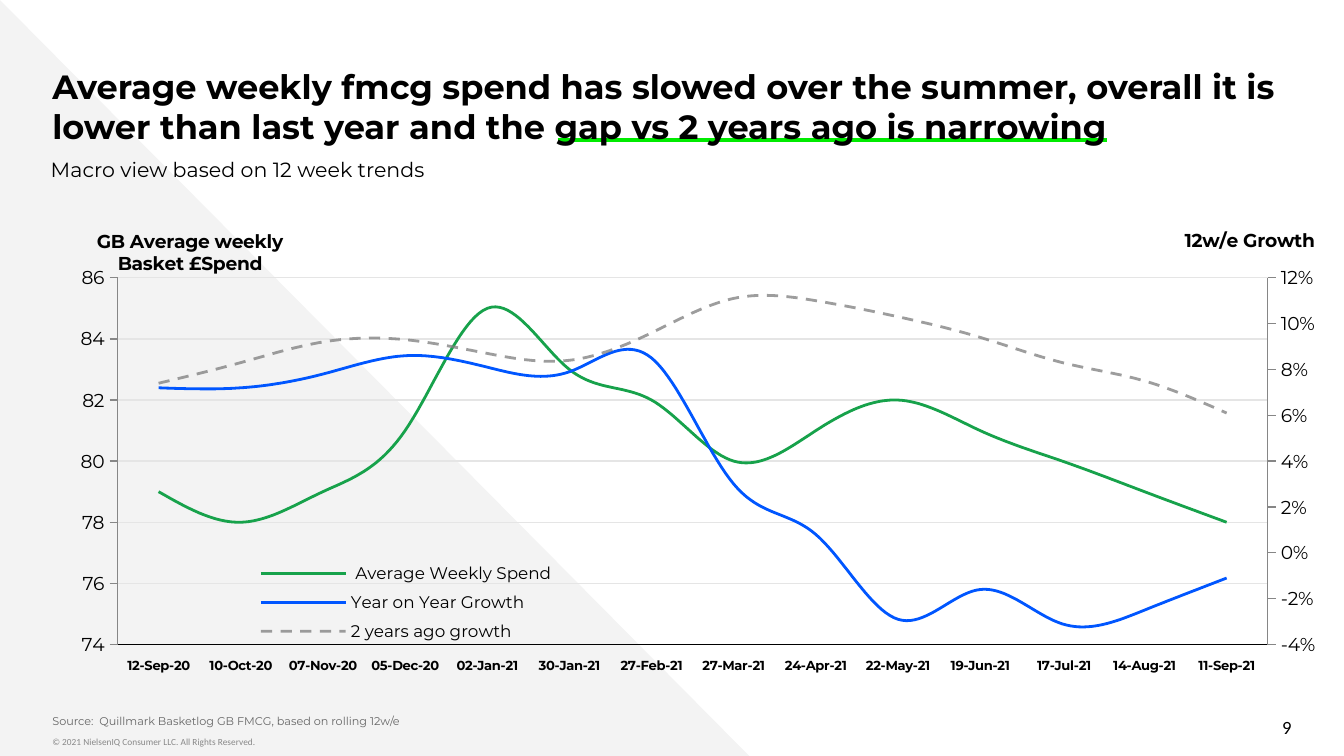
from copy import deepcopy

from lxml import etree
from pptx import Presentation
from pptx import util as u
from pptx.chart import axis as chart_axis
from pptx.chart import data as chart_data
from pptx.dml.color import RGBColor
from pptx.enum import chart as ch, dml, shapes, text
from pptx.oxml.ns import qn

COLORS = {
    "black": "000000", "panel": "F3F3F3", "accent": "00EB00",
    "source": "666666", "copyright": "888888", "grid": "E5E5E5", "axis": "868686",
    "spend": "17A24B", "yearly": "0056FF", "two_years": "808080",
}
FONT = "Montserrat"

WEEKS = ["12-Sep-20", "10-Oct-20", "07-Nov-20", "05-Dec-20", "02-Jan-21",
         "30-Jan-21", "27-Feb-21", "27-Mar-21", "24-Apr-21", "22-May-21",
         "19-Jun-21", " 17-Jul-21", "14-Aug-21", "11-Sep-21"]
SERIES = [
    (" Average Weekly Spend ", "spend",
     [79, 78, 79, 81, 85, 83, 82, 80, 81, 82, 81, 80, 79, 78]),
    ("Year on Year Growth", "yearly",
     [0.072, 0.072, 0.078, 0.086, 0.081, 0.079, 0.085,
      0.03, 0.008, -0.029, -0.016, -0.031, -0.025, -0.011]),
    ("2 years ago growth", "two_years",
     [0.074, 0.083, 0.092, 0.093, 0.087, 0.084, 0.096,
      0.111, 0.11, 0.103, 0.094, 0.083, 0.075, 0.061]),
]
SPEND_AXIS = {"minimum_scale": 74, "maximum_scale": 86, "major_unit": 2}
GROWTH_AXIS = {"minimum_scale": -0.04, "maximum_scale": 0.12, "major_unit": 0.02}


def rgb(name):
    return RGBColor.from_string(COLORS[name])


def cm(*lengths):
    return [u.Cm(length) for length in lengths]


def apply(target, values):
    for name, value in values.items():
        setattr(target, name, value)


def style_font(font, size, color="black", bold=False, name=FONT):
    apply(font, {"size": u.Pt(size), "bold": bold, "name": name})
    font.color.rgb = rgb(color)


def style_line(line, color, width):
    line.color.rgb = rgb(color)
    line.width = u.Pt(width)


def send_to_back(shape):
    shape.element.getparent().insert(2, shape.element)


def fill_text(shape, box, words, font, frame=None, align=text.PP_ALIGN.LEFT):
    """Place a text-bearing shape and set its single paragraph."""
    apply(shape, dict(zip(("left", "top", "width", "height"), cm(*box))))
    body = shape.text_frame
    body.text = words
    apply(body, {"word_wrap": True, "auto_size": text.MSO_AUTO_SIZE.NONE,
                 "vertical_anchor": text.MSO_ANCHOR.TOP, **(frame or {})})
    body.paragraphs[0].alignment = align
    style_font(body.paragraphs[0].font, **font)


def add_text(slide, box, *args, **options):
    fill_text(slide.shapes.add_textbox(*cm(*box)), box, *args, **options)


def insets(side, end):
    return dict(zip(("margin_left", "margin_right", "margin_top", "margin_bottom"),
                    cm(side, side, end, end)))


def add_backdrop(slide):
    panel = slide.shapes.add_shape(shapes.MSO_SHAPE.RIGHT_TRIANGLE, *cm(0, 0, 14.2, 14.33))
    panel.shadow.inherit = False
    panel.fill.solid()
    panel.fill.fore_color.rgb = rgb("panel")
    panel.line.fill.background()

    underline = slide.shapes.add_connector(
        shapes.MSO_CONNECTOR.STRAIGHT, *cm(10.54, 2.64, 20.93, 2.64))
    style_line(underline.line, "accent", 2.25)
    etree.SubElement(underline.element.spPr, qn("a:effectLst"))

    send_to_back(underline)
    send_to_back(panel)


def set_layout(parent, index, inner=False, **fractions):
    """Give a chart part a manual layout in fractions of the chart."""
    layout = parent.find(qn("c:layout"))
    if layout is None:
        layout = etree.Element(qn("c:layout"))
        parent.insert(index, layout)
    for child in list(layout):
        layout.remove(child)
    manual = etree.SubElement(layout, qn("c:manualLayout"))
    if inner:
        etree.SubElement(manual, qn("c:layoutTarget"), val="inner")
    for key in ("x", "y"):
        etree.SubElement(manual, qn(f"c:{key}Mode"), val="edge")
    for key, value in fractions.items():
        etree.SubElement(manual, qn(f"c:{key}"), val=str(value))


def style_value_axis(axis, scale, number_format, title, x, y):
    apply(axis, {**scale, "major_tick_mark": ch.XL_TICK_MARK.OUTSIDE,
                 "minor_tick_mark": ch.XL_TICK_MARK.NONE})
    apply(axis.tick_labels, {"number_format": number_format,
                             "number_format_is_linked": False})
    style_font(axis.tick_labels.font, 10)
    style_line(axis.format.line, "axis", 0.75)
    frame = axis.axis_title.text_frame
    frame.text = title
    for paragraph in frame.paragraphs:
        paragraph.alignment = text.PP_ALIGN.CENTER
        for run in paragraph.runs:
            style_font(run.font, 10, bold=True)
    title_xml = axis.axis_title.element
    title_xml.find(".//" + qn("a:bodyPr")).set("rot", "0")
    set_layout(title_xml, 1, x=x, y=y)


def split_growth_axis(plot_area):
    """Move the growth series to a second line group; return its value axis."""
    spend_lines = plot_area.find(qn("c:lineChart"))
    growth_lines = deepcopy(spend_lines)
    spend_lines.addnext(growth_lines)
    growth_lines.remove(growth_lines.find(qn("c:ser")))
    for series in spend_lines.findall(qn("c:ser"))[1:]:
        spend_lines.remove(series)

    categories = deepcopy(plot_area.find(qn("c:catAx")))
    values = deepcopy(plot_area.find(qn("c:valAx")))
    plot_area.find(qn("c:valAx")).addnext(values)
    values.addnext(categories)
    ids = {}
    for part in (growth_lines, values, categories):
        for ref in part.findall(qn("c:axId")) + part.findall(qn("c:crossAx")):
            ref.set("val", ids.setdefault(ref.get("val"), str(5001 + len(ids))))
    values.find(qn("c:axPos")).set("val", "r")
    values.find(qn("c:crosses")).set("val", "max")
    chart_axis.CategoryAxis(categories).visible = False
    return chart_axis.ValueAxis(values)


def add_trend_chart(slide):
    data = chart_data.CategoryChartData()
    data.categories = WEEKS
    for name, _, values in SERIES:
        data.add_series(name, values)
    chart = slide.shapes.add_chart(
        ch.XL_CHART_TYPE.LINE, *cm(1.52, 3.94, 23.39, 9.37), data).chart
    style_font(chart.font, 10, name="Arial")
    apply(chart, {"has_title": False, "has_legend": True})
    plot_area = chart.element.find(".//" + qn("c:plotArea"))

    chart.plots[0].vary_by_categories = False
    for series, (_, color, _) in zip(chart.plots[0].series, SERIES):
        series.smooth = True
        style_line(series.format.line, color, 1.5)
    series.format.line.dash_style = dml.MSO_LINE.DASH
    dashed_color = plot_area.findall(".//" + qn("c:ser"))[-1].find(".//" + qn("a:srgbClr"))
    etree.SubElement(dashed_color, qn("a:alpha"), val="76000")

    weeks = chart.category_axis
    apply(weeks, {"major_tick_mark": ch.XL_TICK_MARK.NONE,
                  "minor_tick_mark": ch.XL_TICK_MARK.NONE,
                  "tick_label_position": ch.XL_TICK_LABEL_POSITION.LOW})
    style_font(weeks.tick_labels.font, 7, bold=True)
    style_line(weeks.format.line, "black", 0.75)

    spend = chart.value_axis
    growth = split_growth_axis(plot_area)
    growth.has_major_gridlines = False
    style_line(spend.major_gridlines.format.line, "grid", 0.75)
    style_value_axis(spend, SPEND_AXIS, "0", "GB Average weekly\nBasket £Spend", 0.01, 0.03)
    style_value_axis(growth, GROWTH_AXIS, "0%", "12w/e Growth", 0.89, 0.03)
    set_layout(plot_area, 0, inner=True, x=0.03, y=0.14, w=0.93, h=0.74)

    apply(chart.legend, {"position": ch.XL_LEGEND_POSITION.BOTTOM,
                         "include_in_layout": False})
    style_font(chart.legend.font, 9)
    set_layout(chart.element.find(".//" + qn("c:legend")), 1, x=0.14, y=0.7, w=0.25, h=0.19)


def main():
    deck = Presentation()
    deck.slide_width, deck.slide_height = cm(25.4, 14.29)
    slide = deck.slides.add_slide(deck.slide_layouts[0])
    title, source = slide.placeholders
    add_backdrop(slide)
    fill_text(title, (0.99, 0.99, 24.49, 1.83),
              "Average weekly fmcg spend has slowed over the summer, overall it is "
              "lower than last year and the gap vs 2 years ago is narrowing",
              {"size": 18, "bold": True}, insets(0, 0.25))
    fill_text(source, (0.99, 13.49, 22.66, 0.51),
              "Source:  Quillmark Basketlog GB FMCG, based on rolling 12w/e",
              {"size": 6, "color": "source"},
              {**insets(0, 0.25), "vertical_anchor": text.MSO_ANCHOR.BOTTOM})
    add_trend_chart(slide)
    add_text(slide, (0.71, 2.84, 12.7, 0.74),
             "Macro view based on 12 week trends", {"size": 11})
    add_text(slide, (0.99, 13.79, 14.07, 0.51),
             "© 2021 NielsenIQ Consumer LLC. All Rights Reserved.",
             {"size": 5, "color": "copyright", "name": "Calibri"}, insets(0, 0.13))
    add_text(slide, (18.69, 13.36, 5.72, 0.76), "9", {"size": 10, "name": "Calibri"},
             {**insets(0, 0.13), "vertical_anchor": text.MSO_ANCHOR.MIDDLE},
             align=text.PP_ALIGN.RIGHT)
    deck.save("out.pptx")


if __name__ == "__main__":
    main()
